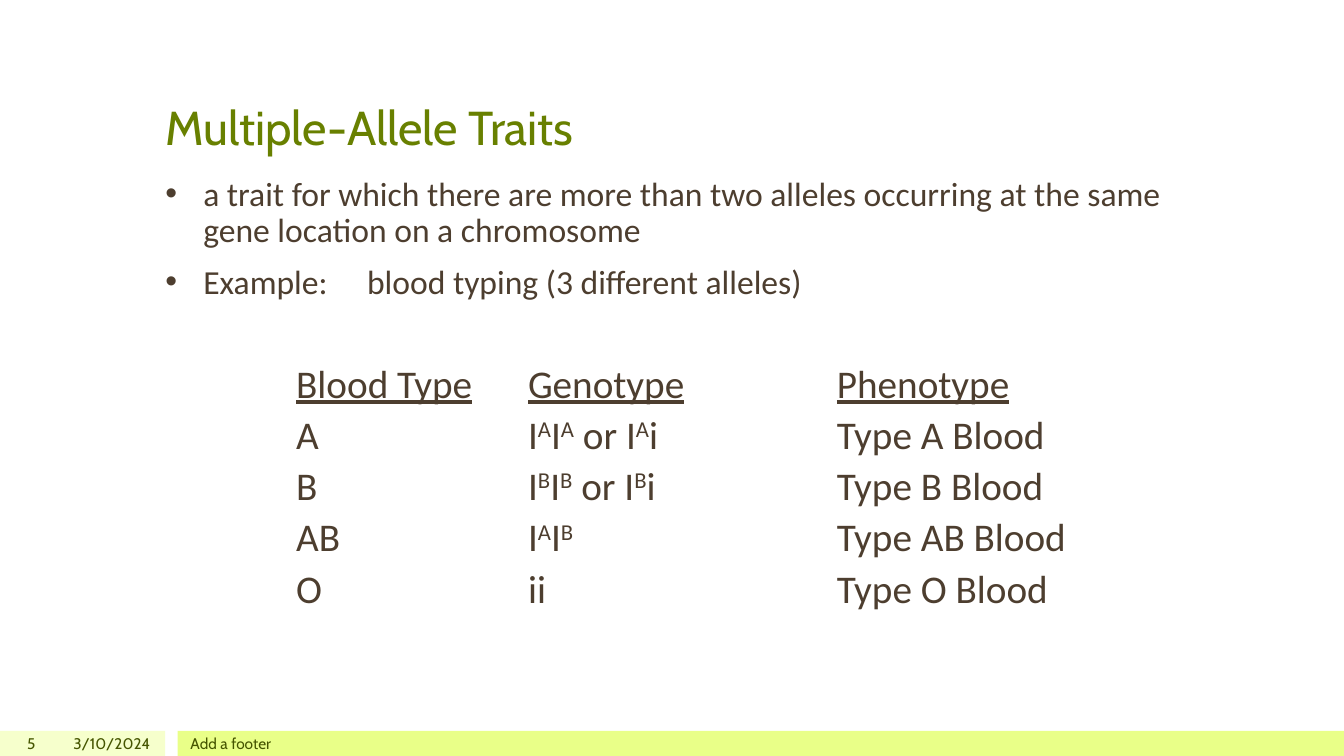
from lxml.etree import SubElement
from pptx import Presentation
from pptx.dml.color import RGBColor
from pptx.enum.shapes import MSO_SHAPE as Shape
from pptx.enum.text import MSO_ANCHOR as Anchor, MSO_AUTO_SIZE as AutoSize, PP_ALIGN as Align
from pptx.oxml.ns import qn
from pptx.util import Pt

TITLE_GREEN, FOOTER_GREEN, BROWN = "688000", "455500", "4D3E2F"


def color(hex_value):
    return RGBColor.from_string(hex_value)


def style(font, name, size, hex_value):
    font.name = name
    font.size = Pt(size)
    font.color.rgb = color(hex_value)


prs = Presentation()
prs.slide_width, prs.slide_height = Pt(960), Pt(540)
slide = prs.slides.add_slide(prs.slide_layouts[1])
title, definition = slide.placeholders

# Footer bars
for left, width, fill in [(0, 118, "F6FFCC"), (127, 833, "E9FF88")]:
    bar = slide.shapes.add_shape(Shape.RECTANGLE, Pt(left), Pt(522), Pt(width), Pt(18))
    bar.shadow.inherit = False
    bar.fill.solid()
    bar.fill.fore_color.rgb = color(fill)
    bar.line.fill.background()

# Title
title.left, title.top, title.width, title.height = Pt(111), Pt(21.6), Pt(738), Pt(93)
heading = title.text_frame
heading.text = "Multiple-Allele Traits"
heading.auto_size = AutoSize.NONE
heading.vertical_anchor = Anchor.BOTTOM
heading.paragraphs[0].alignment = Align.LEFT
style(heading.paragraphs[0].runs[0].font, "Cabin", 34, TITLE_GREEN)

# Definition and example
definition.left, definition.top = Pt(111), Pt(123)
definition.width, definition.height = Pt(738), Pt(363.6)
points = definition.text_frame
points.text = (
    "a trait for which there are more than two alleles occurring at the same "
    "gene location on a chromosome\n"
    "Example:\tblood typing (3 different alleles)"
)
points.auto_size = AutoSize.NONE
for index, point in enumerate(points.paragraphs):
    props = point._p.get_or_add_pPr()
    props.set("marL", str(Pt(27)))
    props.set("indent", str(-Pt(27)))
    SubElement(props, qn("a:buChar"), char="•")
    tabs = SubElement(props, qn("a:tabLst"))
    SubElement(tabs, qn("a:tab"), pos=str(Pt(144)), algn="l")
    point.line_spacing = 0.9
    point.space_before = Pt(11 if index else 0)
    style(point.runs[0].font, "Calibri", 24, BROWN)

# Blood type table: "|" switches between normal and superscript text
blood_types = [
    ("Blood Type", "Genotype", "Phenotype"),
    ("A", "I|A|I|A| or I|A|i", "Type A Blood"),
    ("B", "I|B|I|B| or I|B|i", "Type B Blood"),
    ("AB", "I|A|I|B", "Type AB Blood"),
    ("O", "ii", "Type O Blood"),
]
table = slide.shapes.add_table(5, 3, Pt(206.6), Pt(257.8), Pt(607), Pt(183)).table
table.first_row = table.horz_banding = False
for column, width in zip(table.columns, (165.6, 220.7, 220.7)):
    column.width = Pt(width)
for row, entries in enumerate(blood_types):
    for col, entry in enumerate(entries):
        cell = table.cell(row, col)
        cell.fill.background()
        cell.margin_left = cell.margin_right = Pt(5)
        cell.margin_top = cell.margin_bottom = 0
        for part, text in enumerate(entry.split("|")):
            run = cell.text_frame.paragraphs[0].add_run()
            run.text = text
            style(run.font, "Calibri", 28, BROWN)
            run.font.underline = row == 0
            if part % 2:
                run._r.get_or_add_rPr().set("baseline", "30000")

# Slide number, date and footer
for text, left, width, align in [
    ("5", 0, 32.4, Align.RIGHT),
    ("3/10/2024", 36, 78.5, Align.RIGHT),
    ("Add a footer", 129, 720, Align.LEFT),
]:
    label = slide.shapes.add_textbox(Pt(left), Pt(522), Pt(width), Pt(18)).text_frame
    label.word_wrap = True
    label.vertical_anchor = Anchor.MIDDLE
    label.text = text
    label.paragraphs[0].alignment = align
    style(label.paragraphs[0].runs[0].font, "Cabin", 11, FOOTER_GREEN)

prs.save("out.pptx")
